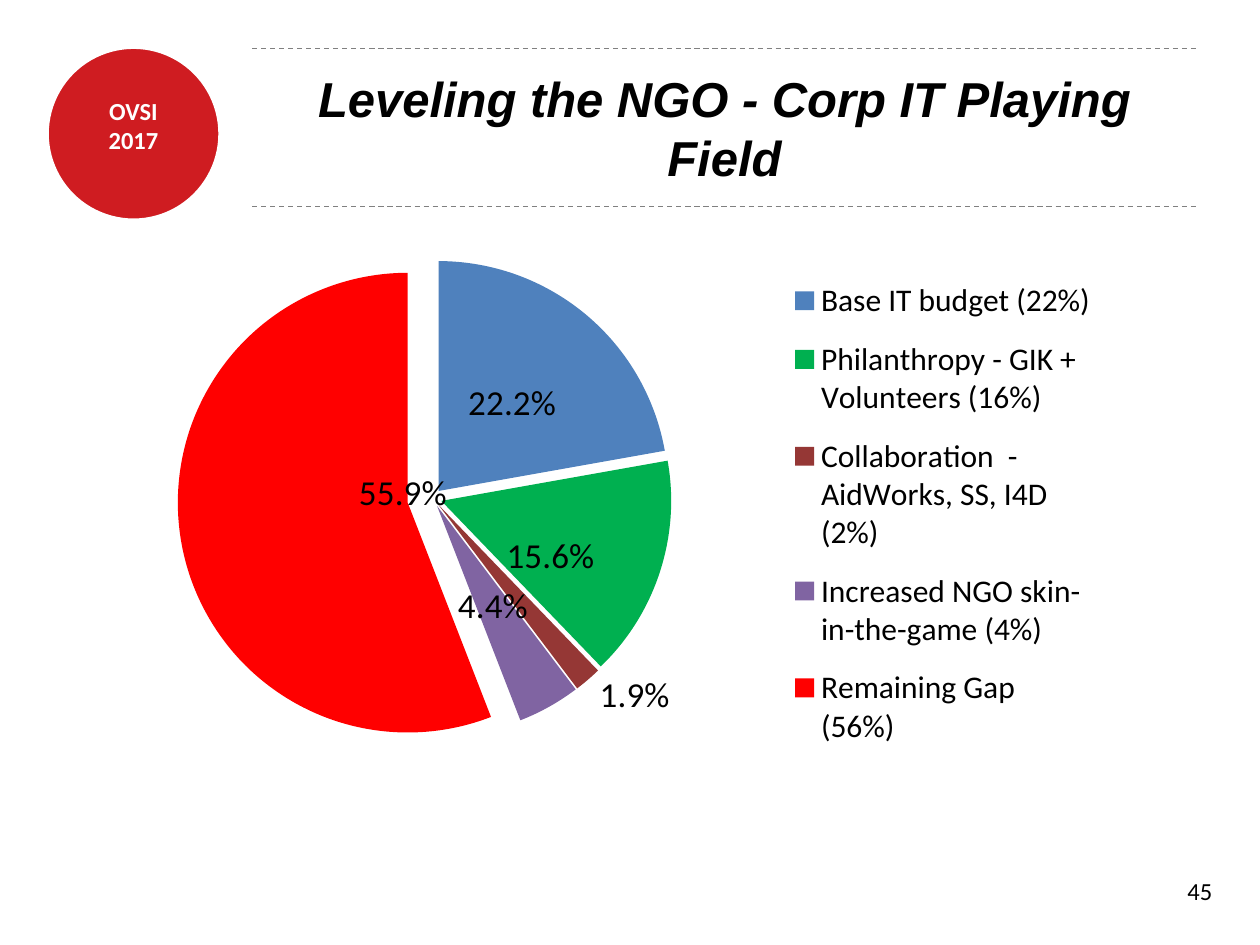
import copy
from dataclasses import dataclass

import pptx
import pptx.chart.data
import pptx.dml.color
import pptx.enum.chart
import pptx.enum.dml
import pptx.enum.shapes
import pptx.enum.text
import pptx.oxml
import pptx.oxml.ns
import pptx.util
from lxml import etree

WIDTH, HEIGHT = 10, 7.5
COLORS = {
    "badge": "CF1C21", "white": "FFFFFF", "black": "000000", "rule": "808080",
    "budget": "4F81BD", "philanthropy": "00B050", "collaboration": "953735",
    "skin": "8064A2", "gap": "FF0000",
}
ALIGN = pptx.enum.text.PP_ALIGN
ANCHOR = pptx.enum.text.MSO_ANCHOR
qn = pptx.oxml.ns.qn


@dataclass
class Area:
    """A rectangle in percent of the slide's or the chart's size."""
    left: float
    top: float
    width: float
    height: float

    def on_slide(self) -> list[int]:
        return [pptx.util.Inches(percent * side / 100) for percent, side in (
            (self.left, WIDTH), (self.top, HEIGHT),
            (self.width, WIDTH), (self.height, HEIGHT))]


@dataclass
class Slice:
    name: str
    value: float
    color: str
    explosion: int = 4
    label_shift: tuple[float, float] | None = None


SLICES = [
    Slice("Base IT budget (22%)", 22.2, "budget"),
    Slice("Philanthropy - GIK + Volunteers (16%)", 15.6, "philanthropy",
          label_shift=(0, 2.8)),
    Slice("Collaboration  - AidWorks, SS, I4D (2%)", 1.9, "collaboration",
          label_shift=(12.8, 14.5)),
    Slice("Increased NGO skin-in-the-game (4%)", 4.4, "skin"),
    Slice("Remaining Gap  (56%)", 55.9, "gap", 11, (11.4, -4.4)),
]


def rgb(name: str) -> pptx.dml.color.RGBColor:
    return pptx.dml.color.RGBColor.from_string(COLORS[name])


def add_text(page, area: Area, text: str, *, size: float, font="Calibri",
             color="black", bold=False, italic=False, align=ALIGN.CENTER,
             anchor=ANCHOR.TOP, inset: float | None = None) -> None:
    frame = page.shapes.add_textbox(*area.on_slide()).text_frame
    frame.word_wrap = True
    frame.vertical_anchor = anchor
    if inset is not None:
        frame.margin_left = frame.margin_right = pptx.util.Inches(inset)
        frame.margin_top = frame.margin_bottom = pptx.util.Inches(inset)
    frame.text = text
    for para in frame.paragraphs:
        para.alignment = align
        for span in para.runs:
            span.font.name, span.font.size = font, pptx.util.Pt(size)
            span.font.bold, span.font.italic = bold, italic
            span.font.color.rgb = rgb(color)


def add_badge(page, area: Area) -> None:
    badge = page.shapes.add_shape(
        pptx.enum.shapes.MSO_SHAPE.OVAL, *area.on_slide())
    badge.shadow.inherit = False
    badge.fill.solid()
    badge.fill.fore_color.rgb = rgb("badge")
    badge.line.color.rgb = rgb("white")
    badge.line.width = pptx.util.Pt(2.5)


def add_rule(page, area: Area) -> None:
    left, top, width, _ = area.on_slide()
    rule = page.shapes.add_connector(
        pptx.enum.shapes.MSO_CONNECTOR.STRAIGHT, left, top, left + width, top)
    rule.line.color.rgb = rgb("rule")
    rule.line.width = pptx.util.Pt(0.75)
    rule.line.dash_style = pptx.enum.dml.MSO_LINE.DASH
    etree.SubElement(rule._element.spPr, qn("a:effectLst"))


def chart_element(tag: str, value) -> etree._Element:
    element = pptx.oxml.parse_xml(
        f"<c:{tag} {pptx.oxml.ns.nsdecls('c')}/>")
    element.set("val", str(value))
    return element


def manual_layout(**settings) -> etree._Element:
    layout = pptx.oxml.parse_xml(
        f"<c:layout {pptx.oxml.ns.nsdecls('c')}><c:manualLayout/></c:layout>")
    for tag, value in settings.items():
        if not isinstance(value, str):
            value = round(value / 100, 4)
        layout[0].append(chart_element(tag, value))
    return layout


def place_part(parent, index: int, area: Area, **target) -> None:
    for old in parent.findall(qn("c:layout")):
        parent.remove(old)
    parent.insert(index, manual_layout(
        **target, xMode="edge", yMode="edge", x=area.left, y=area.top,
        w=area.width, h=area.height))


def add_pie(page, area: Area) -> None:
    data = pptx.chart.data.CategoryChartData()
    data.categories = [part.name for part in SLICES]
    data.add_series("Series 1", [part.value for part in SLICES])
    chart = page.shapes.add_chart(
        pptx.enum.chart.XL_CHART_TYPE.PIE, *area.on_slide(), data).chart
    chart.has_title = False
    chart.font.name, chart.font.size = "Calibri", pptx.util.Pt(10)
    chart.font.color.rgb = rgb("black")
    chart.plots[0].vary_by_categories = True

    # Legend and plot area
    chart.has_legend = True
    legend = chart.legend
    legend.position = pptx.enum.chart.XL_LEGEND_POSITION.RIGHT
    legend.include_in_layout = False
    legend.font.name, legend.font.size = "Calibri", pptx.util.Pt(18)
    legend.font.color.rgb = rgb("black")
    place_part(legend._element, 1, Area(65.6, 16, 32, 71))
    place_part(chart._chartSpace.chart.plotArea, 0,
               Area(3.7, 17, 48.4, 64.7), layoutTarget="inner")

    # Percent labels
    series = chart.plots[0].series[0]
    labels = series.data_labels
    labels.show_percentage, labels.show_value = True, False
    labels.number_format, labels.number_format_is_linked = "0.0%", False
    labels.position = pptx.enum.chart.XL_LABEL_POSITION.CENTER
    labels.font.name, labels.font.size = "Calibri", pptx.util.Pt(20)
    labels.font.color.rgb = rgb("black")
    for old in labels._element.findall(qn("c:showLeaderLines")):
        labels._element.remove(old)
    shared = list(labels._element)
    labels._element.append(chart_element("showLeaderLines", 1))

    # Slices, with their pull-out and moved labels
    moved = []
    for index, part in enumerate(SLICES):
        fill = series.points[index].format.fill
        fill.solid()
        fill.fore_color.rgb = rgb(part.color)
        point = series._element.findall(qn("c:dPt"))[index]
        point.find(qn("c:spPr")).addprevious(
            chart_element("explosion", part.explosion))
        if part.label_shift:
            label = pptx.oxml.parse_xml(
                f"<c:dLbl {pptx.oxml.ns.nsdecls('c')}/>")
            x, y = part.label_shift
            label.append(chart_element("idx", index))
            label.append(manual_layout(x=x, y=y))
            label.extend([copy.deepcopy(item) for item in shared])
            moved.append(label)
    for position, label in enumerate(moved):
        labels._element.insert(position, label)


def main() -> None:
    deck = pptx.Presentation()
    deck.slide_width = pptx.util.Inches(WIDTH)
    deck.slide_height = pptx.util.Inches(HEIGHT)
    page = deck.slides.add_slide(deck.slide_layouts[6])

    # Header: badge, dashed rules and title
    add_badge(page, Area(3.7, 4.95, 13.8, 18.4))
    add_text(page, Area(4.3, 10.15, 12.6, 6.3), "OVSI\n2017",
             size=14, color="white", bold=True, inset=0)
    for top in (5.15, 21.85):
        add_rule(page, Area(20, top, 75, 0))
    add_text(page, Area(20, 5.1, 75, 16.7),
             "Leveling the NGO - Corp IT Playing Field", size=28,
             font="Arial", bold=True, italic=True, anchor=ANCHOR.MIDDLE)

    # Page number and pie chart
    add_text(page, Area(80.3, 92, 16.9, 5.1), "45", size=14,
             align=ALIGN.RIGHT)
    add_pie(page, Area(13.3, 15.6, 75.4, 75.2))
    deck.save("out.pptx")


if __name__ == "__main__":
    main()
